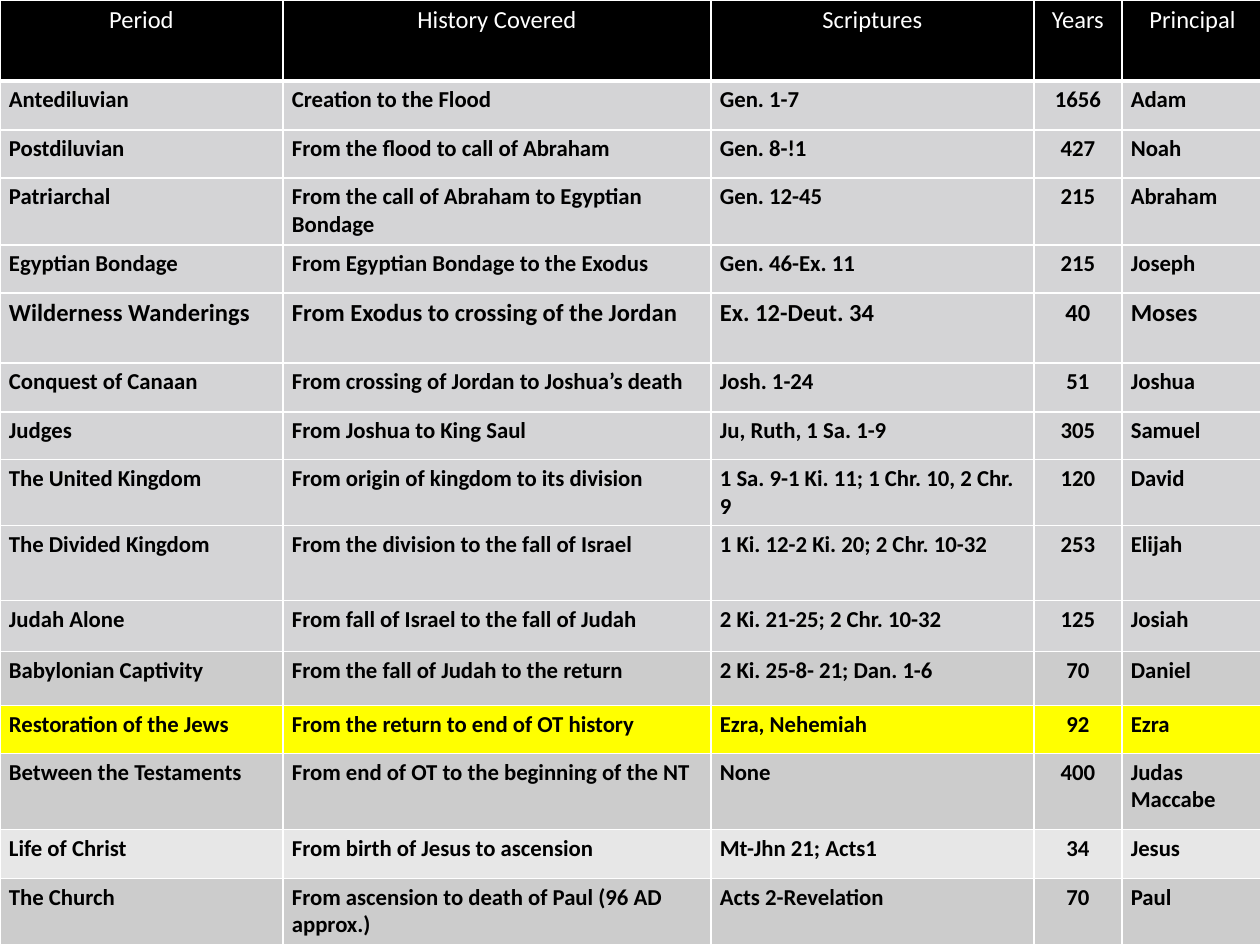
from pptx import Presentation
from pptx.dml.color import RGBColor
from pptx.enum.text import PP_ALIGN
from pptx.oxml import parse_xml
from pptx.oxml.ns import nsdecls
from pptx.util import Pt

SCALE = 914400 / 126
COLS = [283, 428, 323, 88, 147]
ROWS = [81, 49, 48, 67, 48, 70, 49, 48, 66, 75, 51, 54, 48, 76, 49, 66]
YEARS = 3  # index of the centred column

HEADS = ["Period", "History Covered", "Scriptures", "Years", "Principal "]
ERAS = [
    ["Antediluvian", "Creation to the Flood", "Gen. 1-7", "1656", "Adam"],
    ["Postdiluvian", "From the flood to call of Abraham", "Gen. 8-!1", "427", "Noah"],
    ["Patriarchal", "From the call of Abraham to Egyptian Bondage",
     "Gen. 12-45", "215", "Abraham"],
    ["Egyptian Bondage", "From Egyptian Bondage to the Exodus",
     "Gen. 46-Ex. 11", "215", "Joseph"],
    ["Wilderness Wanderings", "From Exodus to crossing of the Jordan",
     "Ex. 12-Deut. 34", "40", "Moses"],
    ["Conquest of Canaan", "From crossing of Jordan to Joshua’s death",
     "Josh. 1-24", "51", "Joshua"],
    ["Judges", "From Joshua to King Saul", "Ju, Ruth, 1 Sa. 1-9", "305", "Samuel"],
    ["The United Kingdom", "From origin of kingdom to its division",
     "1 Sa. 9-1 Ki. 11; 1 Chr. 10, 2 Chr. 9", "120", "David"],
    ["The Divided Kingdom", "From the division to the fall of Israel",
     "1 Ki. 12-2 Ki. 20; 2 Chr. 10-32", "253", "Elijah"],
    ["Judah Alone", "From fall of Israel to the fall of Judah",
     "2 Ki. 21-25; 2 Chr. 10-32", "125", "Josiah"],
    ["Babylonian Captivity", "From the fall of Judah to the return",
     "2 Ki. 25-8- 21; Dan. 1-6", "70", "Daniel"],
    ["Restoration of the Jews", "From the return to end of OT history",
     "Ezra, Nehemiah", "92", "Ezra"],
    ["Between the Testaments", "From end of OT to the beginning of the NT",
     "None", "400", "Judas Maccabe"],
    ["Life of Christ", "From birth of Jesus to ascension",
     "Mt-Jhn 21; Acts1", "34", "Jesus"],
    ["The Church", "From ascension to death of Paul (96 AD approx.)",
     "Acts 2-Revelation", "70", "Paul"],
]
FILLS = ["D4D4D6"] * 10 + ["CCCCCC", "FFFF00", "CCCCCC", "E7E7E7", "CCCCCC"]
LARGE = "Wilderness Wanderings"  # the one era set in larger type


def px(n):
    return round(n * SCALE)


def color(code):
    return RGBColor.from_string(code)


def write(frame, text, size=13, ink="000000", bold=True, center=False):
    para = frame.paragraphs[0]
    para.alignment = PP_ALIGN.CENTER if center else PP_ALIGN.LEFT
    run = para.add_run()
    run.text = text
    font = run.font
    font.name, font.size, font.bold = "Calibri", Pt(size), bold
    font.color.rgb = color(ink)


def border(cell, base=1):
    props = cell._tc.get_or_add_tcPr()
    sides = {"lnL": 1, "lnR": 1, "lnT": 1, "lnB": base}
    for spot, (side, width) in enumerate(sides.items()):
        line = parse_xml(
            f'<a:{side} {nsdecls("a")} w="{Pt(width)}"><a:solidFill>'
            f'<a:srgbClr val="FFFFFF"/></a:solidFill></a:{side}>')
        props.insert(spot, line)  # borders come before the fill


def fill_row(row, texts, fill, base=1, mid=(YEARS,), **form):
    for col, (cell, text) in enumerate(zip(row.cells, texts)):
        cell.margin_left = cell.margin_right = px(9)
        cell.margin_top = cell.margin_bottom = px(5)
        cell.fill.solid()
        cell.fill.fore_color.rgb = color(fill)
        border(cell, base)
        write(cell.text_frame, text, center=col in mid, **form)


def add_grid(slide):
    frame = slide.shapes.add_table(
        len(ROWS), len(COLS), 0, 0, px(sum(COLS)), px(sum(ROWS)))
    table = frame.table
    table.first_row = table.horz_banding = False
    for col, width in zip(table.columns, COLS):
        col.width = px(width)
    for row, height in zip(table.rows, ROWS):
        row.height = px(height)
    return table


def main():
    deck = Presentation()
    deck.slide_width, deck.slide_height = px(1260), px(945)
    slide = deck.slides.add_slide(deck.slide_layouts[6])
    head, *body = add_grid(slide).rows

    # Header row
    fill_row(head, HEADS, "000000", base=3, mid=range(len(COLS)),
             size=14, ink="FFFFFF", bold=False)

    # One row for each era
    for row, era, fill in zip(body, ERAS, FILLS):
        fill_row(row, era, fill, size=14 if era[0] == LARGE else 13)

    deck.save("out.pptx")


if __name__ == "__main__":
    main()
